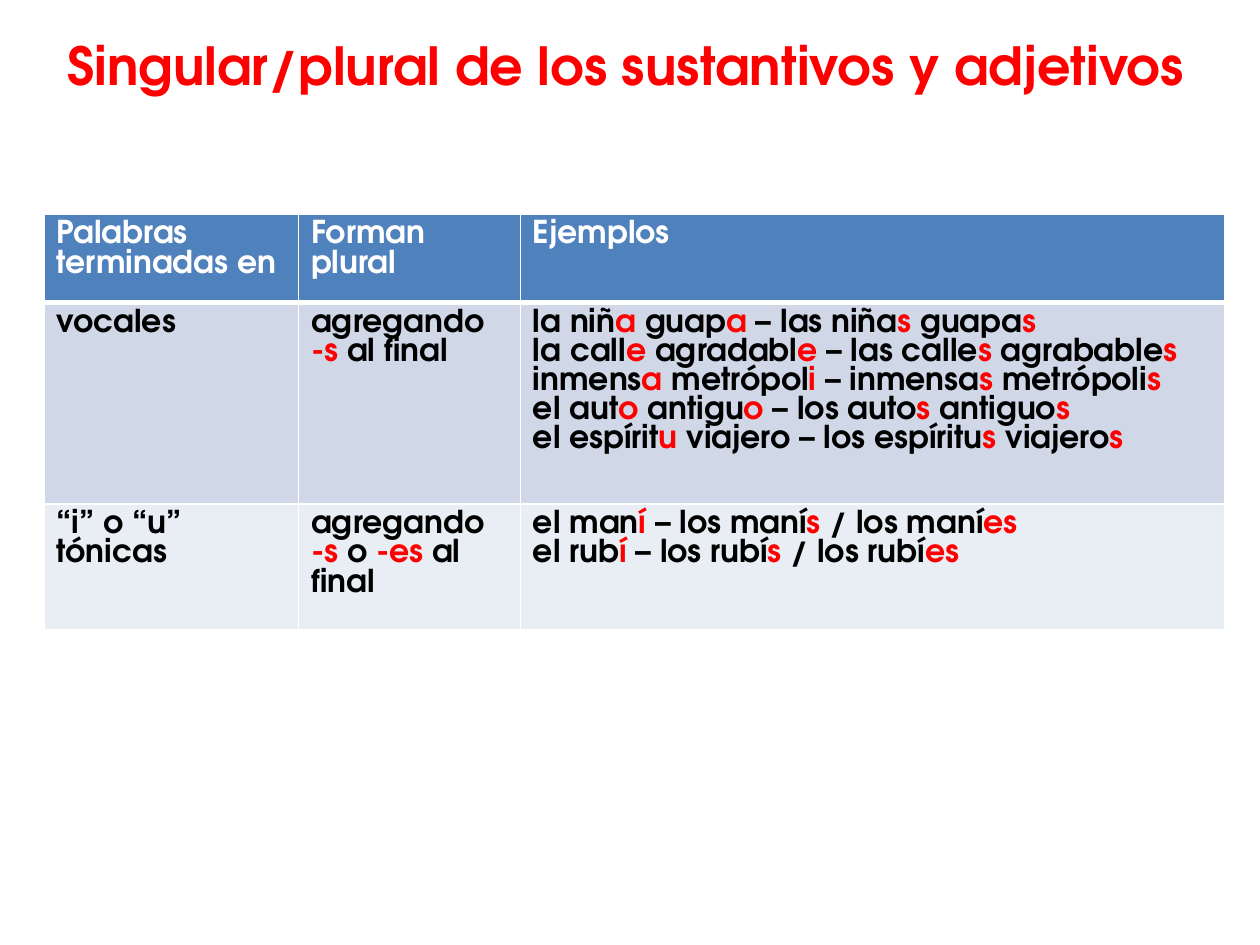
from lxml.etree import SubElement
from pptx import Presentation
from pptx.dml.color import RGBColor
from pptx.enum.text import PP_ALIGN
from pptx.oxml.ns import qn
from pptx.util import Inches, Pt

FONT = "TeX Gyre Adventor"
RED = RGBColor(0xFF, 0x00, 0x00)
BLACK = RGBColor(0x00, 0x00, 0x00)
WHITE = RGBColor(0xFF, 0xFF, 0xFF)
HEADER_BLUE = RGBColor(0x4F, 0x81, 0xBD)
BAND_DARK = RGBColor(0xD0, 0xD8, 0xE8)
BAND_LIGHT = RGBColor(0xE9, 0xED, 0xF4)

TITLE = "Singular/plural de los sustantivos y adjetivos"
COLUMN_WIDTHS = [2.02, 1.76, 5.59]
ROW_HEIGHTS = [0.69, 1.6, 1.0]
ROW_FILLS = [HEADER_BLUE, BAND_DARK, BAND_LIGHT]
EMPHASIS = "|"
ROWS = [
    [["Palabras terminadas en"], ["Forman plural"], ["Ejemplos"]],
    [
        ["vocales"],
        ["agregando", "|-s |al final"],
        [
            "la niñ|a| guap|a| – las niña|s| guapa|s",
            "la call|e |agradabl|e| – las calle|s |agrabable|s",
            "inmens|a |metrópol|i| – inmensa|s |metrópoli|s",
            "el aut|o |antigu|o| – los auto|s |antiguo|s",
            "el espírit|u |viajero – los espíritu|s |viajero|s",
        ],
    ],
    [
        ["“i” o “u” tónicas"],
        ["agregando", "|-s| o |-es| al final"],
        [
            "el man|í| – los maní|s| / los maní|es",
            "el rub|í| – los rubí|s |/ los rubí|es",
        ],
    ],
]


def add_run(paragraph, text, size, color):
    run = paragraph.add_run()
    run.text = text
    run.font.name = FONT
    run.font.size = Pt(size)
    run.font.bold = True
    run.font.color.rgb = color


def add_title(slide, left, top, width, height):
    shape = slide.shapes.add_textbox(left, top, width, height)
    shape.text_frame.word_wrap = True
    paragraph = shape.text_frame.paragraphs[0]
    paragraph.alignment = PP_ALIGN.CENTER
    add_run(paragraph, TITLE, 30, RED)


def write_cell(cell, lines, base_color):
    frame = cell.text_frame
    for index, line in enumerate(lines):
        paragraph = frame.add_paragraph() if index else frame.paragraphs[0]
        for position, part in enumerate(line.split(EMPHASIS)):
            if part:
                add_run(paragraph, part, 18, RED if position % 2 else base_color)


def set_borders(cell, bottom_width):
    properties = cell._tc.get_or_add_tcPr()
    widths = {"a:lnL": 1, "a:lnR": 1, "a:lnT": 1, "a:lnB": bottom_width}
    for index, (tag, width) in enumerate(widths.items()):
        line = properties.makeelement(qn(tag), {"w": str(Pt(width))})
        properties.insert(index, line)
        fill = SubElement(line, qn("a:solidFill"))
        SubElement(fill, qn("a:srgbClr"), val=str(WHITE))


def add_plural_table(slide, left, top, width, height):
    table = slide.shapes.add_table(
        len(ROWS), len(COLUMN_WIDTHS), left, top, width, height
    ).table
    for column, column_width in zip(table.columns, COLUMN_WIDTHS):
        column.width = Inches(column_width)
    for row_index, (row, row_height) in enumerate(zip(table.rows, ROW_HEIGHTS)):
        row.height = Inches(row_height)
        is_header = row_index == 0
        for cell, lines in zip(row.cells, ROWS[row_index]):
            cell.fill.solid()
            cell.fill.fore_color.rgb = ROW_FILLS[row_index]
            set_borders(cell, 3 if is_header else 1)
            write_cell(cell, lines, WHITE if is_header else BLACK)


def main():
    presentation = Presentation()
    presentation.slide_width = Inches(10)
    presentation.slide_height = Inches(7.5)
    slide = presentation.slides.add_slide(presentation.slide_layouts[6])
    add_title(slide, Inches(0.28), Inches(0.21), Inches(9.37), Inches(1.11))
    add_plural_table(slide, Inches(0.35), Inches(1.7), Inches(9.37), Inches(3.3))
    presentation.save("out.pptx")


if __name__ == "__main__":
    main()
